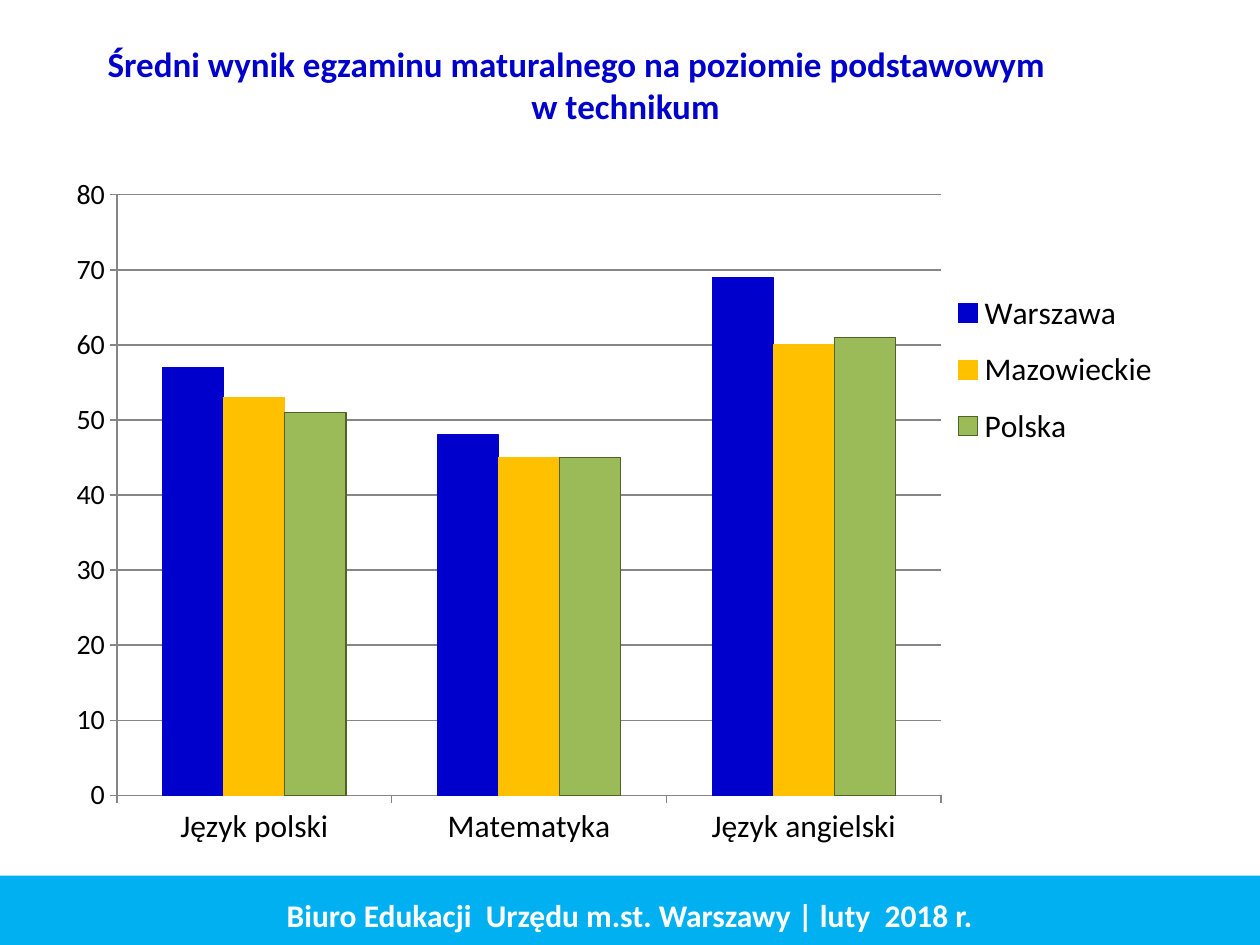
"""Build a slide with a column chart of mean final exam scores in technical schools."""
from lxml import etree
from pptx import Presentation
from pptx.chart.data import CategoryChartData
from pptx.dml.color import RGBColor
from pptx.enum.chart import XL_CHART_TYPE as Kind, XL_LEGEND_POSITION as Side, XL_TICK_MARK as Tick
from pptx.enum.shapes import MSO_SHAPE as Shape
from pptx.enum.text import MSO_ANCHOR as Anchor, PP_ALIGN as Align
from pptx.oxml.ns import qn
from pptx.util import Inches, Pt


def style(font, size, color, bold=False):
    """Set the look of a font."""
    font.name, font.size, font.bold = "Calibri", Pt(size), bold
    font.color.rgb = RGBColor.from_string(color)


def layout(spot, **area):
    """Fix a chart part at shares of the chart's size."""
    box = etree.Element(qn("c:layout"))
    hand = etree.SubElement(box, qn("c:manualLayout"))
    if spot == 0:
        etree.SubElement(hand, qn("c:layoutTarget"), val="inner")
    for key in ("xMode", "yMode"):
        etree.SubElement(hand, qn("c:" + key), val="edge")
    for key, share in area.items():
        etree.SubElement(hand, qn("c:" + key), val=str(share))
    return box


deck = Presentation()
deck.slide_width, deck.slide_height = Inches(10), Inches(7.5)
slide = deck.slides.add_slide(deck.slide_layouts[6])

series = [
    ("Warszawa", (57, 48, 69), "0000CC", "0000CC"),
    ("Mazowieckie", (53, 45, 60), "FFC000", "FFC000"),
    ("Polska", (51, 45, 61), "9BBB59", "4F6228"),
]
data = CategoryChartData()
data.categories = ["Język polski", "Matematyka", "Język angielski"]
for name, scores, fill, edge in series:
    data.add_series(name, scores)
chart = slide.shapes.add_chart(
    Kind.COLUMN_CLUSTERED, Inches(0.43), Inches(1.31), Inches(9.06), Inches(5.51), data
).chart
style(chart.font, 10, "000000")
chart.has_title = False

plot = chart.plots[0]
plot.gap_width, plot.overlap, plot.vary_by_categories = 150, 0, False
for bar, (name, scores, fill, edge) in zip(plot.series, series):
    bar.format.fill.solid()
    bar.format.fill.fore_color.rgb = RGBColor.from_string(fill)
    bar.format.line.color.rgb = RGBColor.from_string(edge)
    bar.format.line.width = Pt(0.75)

scale = chart.value_axis
scale.minimum_scale, scale.maximum_scale, scale.major_unit = 0, 80, 10
scale.has_major_gridlines = True
for axis, size in ((chart.category_axis, 18), (scale, 16)):
    style(axis.tick_labels.font, size, "000000")
    axis.major_tick_mark = Tick.OUTSIDE
for rule in (chart.category_axis, scale, scale.major_gridlines):
    rule.format.line.color.rgb = RGBColor.from_string("868686")
    rule.format.line.width = Pt(0.75)

chart.has_legend = True
legend = chart.legend
legend.position, legend.include_in_layout = Side.RIGHT, False
style(legend.font, 18, "000000")
grid = chart.element.find(".//" + qn("c:plotArea"))
key = chart.element.find(".//" + qn("c:legend"))
for part, spot, area in (
    (grid, 0, dict(x=0.055, y=0.043, w=0.722, h=0.865)),
    (key, 1, dict(x=0.777, y=0.16, w=0.2, h=0.27)),
):
    for old in part.findall(qn("c:layout")):
        part.remove(old)
    part.insert(spot, layout(spot, **area))

title = slide.shapes.add_textbox(Inches(0.75), Inches(0.29), Inches(8.43), Inches(0.77)).text_frame
title.word_wrap = True
title.margin_left = title.margin_right = 0
title.text = "Średni wynik egzaminu maturalnego na poziomie podstawowym\nw technikum"
for line, side in zip(title.paragraphs, ("marR", "marL")):
    line.alignment = Align.CENTER
    line._p.get_or_add_pPr().set(side, str(Inches(0.78)))
    style(line.runs[0].font, 20, "0000CC", True)

band = slide.shapes.add_shape(Shape.RECTANGLE, 0, Inches(6.95), Inches(10), Inches(0.63))
band.shadow.inherit = False
band.fill.solid()
band.fill.fore_color.rgb = RGBColor.from_string("00B0F0")
band.line.fill.background()
band.text_frame.vertical_anchor = Anchor.MIDDLE
band.text_frame.text = "Biuro Edukacji  Urzędu m.st. Warszawy | luty  2018 r."
foot = band.text_frame.paragraphs[0]
foot.alignment, foot.space_before = Align.CENTER, Pt(3.6)
style(foot.runs[0].font, 18, "FFFFFF", True)

deck.save("out.pptx")
